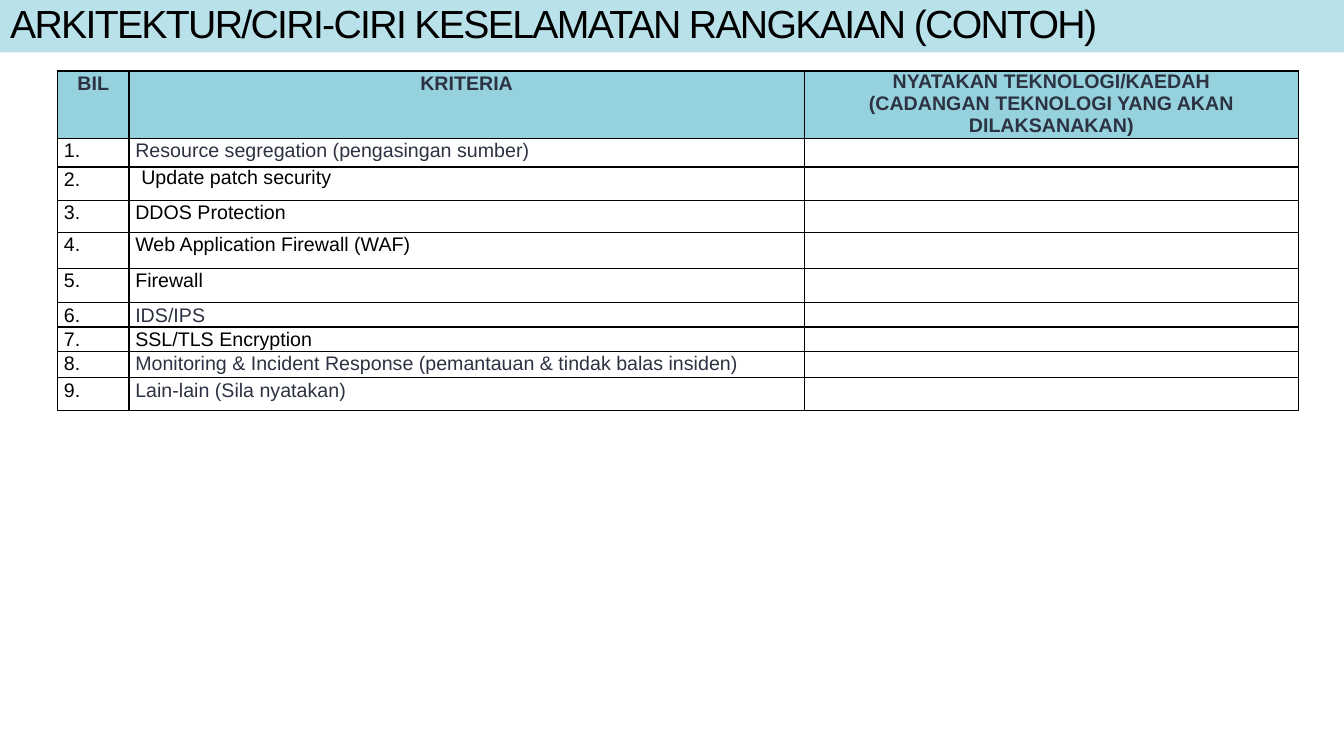
import pptx
import pptx.dml.color
import pptx.enum.text
import pptx.oxml.ns
import pptx.util
import lxml.etree

COLOURS = {
    "banner": "B9E1E9",
    "header": "96D2DE",
    "slate": "2C3242",
    "black": "000000",
}
HEADINGS = [
    ["BIL"],
    ["KRITERIA"],
    ["NYATAKAN TEKNOLOGI/KAEDAH", "(CADANGAN TEKNOLOGI YANG AKAN DILAKSANAKAN)"],
]
CRITERIA = [
    ("Resource segregation (pengasingan sumber)", "slate"),
    ("Update patch security", "black"),
    ("DDOS Protection", "black"),
    ("Web Application Firewall (WAF)", "black"),
    ("Firewall", "black"),
    ("IDS/IPS", "slate"),
    ("SSL/TLS Encryption", "black"),
    ("Monitoring & Incident Response (pemantauan & tindak balas insiden)", "slate"),
    ("Lain-lain (Sila nyatakan)", "slate"),
]
INDENTED = "Update patch security"
COLUMN_WIDTHS = [1.8, 17.02, 12.45]
ROW_HEIGHTS = [1.7, 0.72, 0.84, 0.8, 0.92, 0.86, 0.61, 0.62, 0.66, 0.82]
Cm = pptx.util.Cm
Pt = pptx.util.Pt
ALIGN = pptx.enum.text.PP_ALIGN


class SlideBuilder:
    font_name = "Arial"
    table_size = 14
    border_width = 1

    def __init__(self, presentation):
        self.slide = presentation.slides.add_slide(presentation.slide_layouts[5])

    def colour(self, name):
        return pptx.dml.color.RGBColor.from_string(COLOURS[name])

    def run(self, paragraph, text, size, colour, bold=False):
        run = paragraph.add_run()
        run.text = text
        run.font.name = self.font_name
        run.font.size = Pt(size)
        run.font.bold = bold
        run.font.color.rgb = self.colour(colour)
        return run

    def title(self, text, width, height):
        shape = self.slide.shapes.title
        shape.left, shape.top, shape.width, shape.height = 0, 0, width, Cm(height)
        shape.fill.solid()
        shape.fill.fore_color.rgb = self.colour("banner")
        frame = shape.text_frame
        frame.word_wrap = True
        frame.auto_size = pptx.enum.text.MSO_AUTO_SIZE.NONE
        frame.vertical_anchor = pptx.enum.text.MSO_ANCHOR.MIDDLE
        paragraph = frame.paragraphs[0]
        paragraph.alignment = ALIGN.LEFT
        paragraph.line_spacing = 0.85
        run = self.run(paragraph, text, 28, "black")
        run.font._element.set("spc", "-120")

    def table(self, left, top, widths, heights):
        frame = self.slide.shapes.add_table(
            len(heights), len(widths), Cm(left), Cm(top), Cm(sum(widths)), Cm(sum(heights))
        )
        table = frame.table
        table.horz_banding = False
        for column, width in zip(table.columns, widths):
            column.width = Cm(width)
        for row, height in zip(table.rows, heights):
            row.height = Cm(height)
        return table

    def borders(self, cell):
        properties = cell._tc.get_or_add_tcPr()
        for position, side in enumerate(("lnL", "lnR", "lnT", "lnB")):
            line = lxml.etree.Element(
                pptx.oxml.ns.qn("a:" + side), w=str(Pt(self.border_width))
            )
            fill = lxml.etree.SubElement(line, pptx.oxml.ns.qn("a:solidFill"))
            lxml.etree.SubElement(
                fill, pptx.oxml.ns.qn("a:srgbClr"), val=COLOURS["black"]
            )
            properties.insert(position, line)

    def cell(self, cell, lines, colour="black", header=False, spaced=True, indent=0):
        cell.margin_left = cell.margin_right = Cm(0.16)
        cell.margin_top = cell.margin_bottom = 0
        if header:
            cell.fill.solid()
            cell.fill.fore_color.rgb = self.colour("header")
        else:
            cell.fill.background()
        self.borders(cell)
        frame = cell.text_frame
        for number, text in enumerate(lines):
            paragraph = frame.add_paragraph() if number else frame.paragraphs[0]
            paragraph.alignment = ALIGN.CENTER if header else ALIGN.LEFT
            if spaced:
                paragraph.line_spacing = 1.07
                paragraph.space_after = Pt(8)
            if indent:
                paragraph._p.get_or_add_pPr().set("marL", str(Cm(indent)))
            self.run(paragraph, text, self.table_size, colour, header)
        if not lines:
            lxml.etree.SubElement(
                frame.paragraphs[0]._p,
                pptx.oxml.ns.qn("a:endParaRPr"),
                sz=str(self.table_size * 100),
            )


def main():
    presentation = pptx.Presentation()
    presentation.slide_width = Cm(33.87)
    presentation.slide_height = Cm(19.05)
    builder = SlideBuilder(presentation)
    builder.title(
        "ARKITEKTUR/CIRI-CIRI KESELAMATAN RANGKAIAN (CONTOH)",
        presentation.slide_width,
        1.32,
    )
    table = builder.table(1.45, 1.79, COLUMN_WIDTHS, ROW_HEIGHTS)
    for column, lines in enumerate(HEADINGS):
        builder.cell(
            table.cell(0, column), lines, "slate", header=True, spaced=len(lines) == 1
        )
    for row, (criterion, colour) in enumerate(CRITERIA, start=1):
        indented = criterion == INDENTED
        builder.cell(table.cell(row, 0), [f"{row}."])
        builder.cell(
            table.cell(row, 1),
            [criterion],
            colour,
            spaced=not indented,
            indent=0.15 if indented else 0,
        )
        builder.cell(table.cell(row, 2), [])
    presentation.save("out.pptx")


if __name__ == "__main__":
    main()
